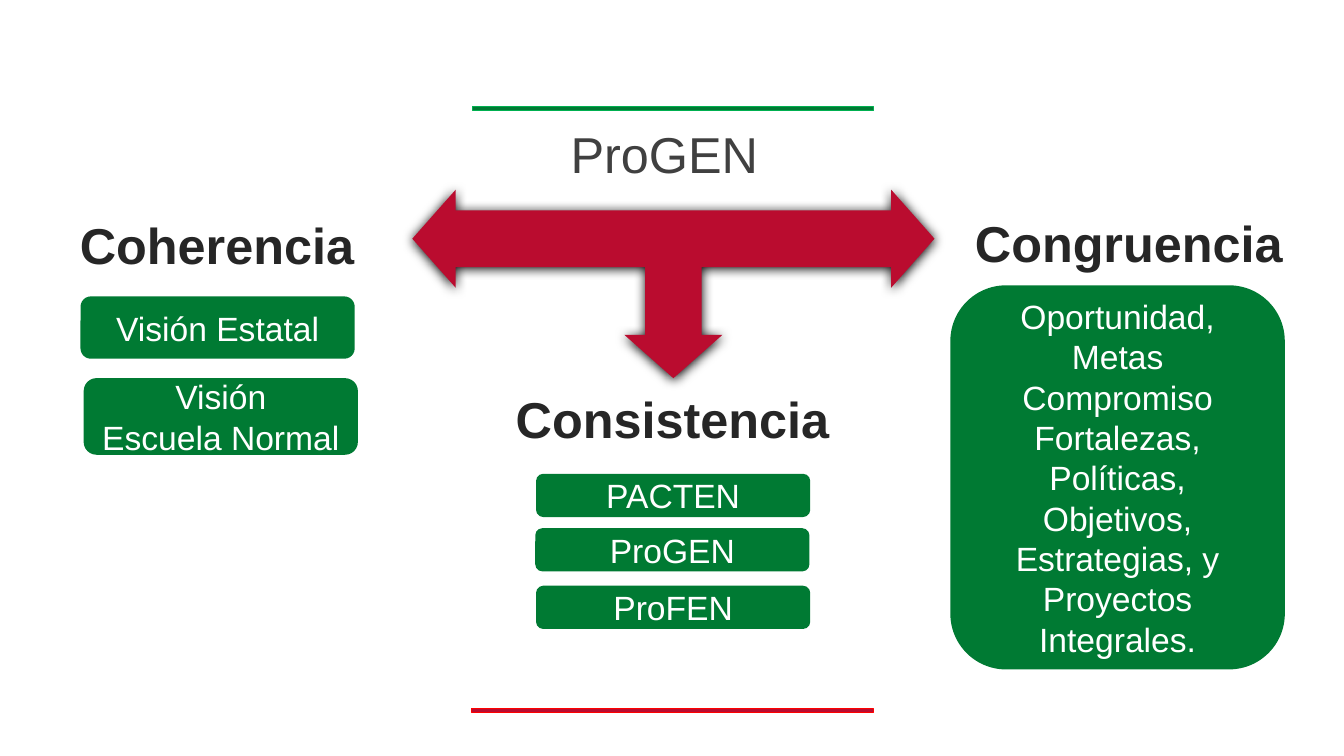
from dataclasses import dataclass

from lxml import etree
from pptx import Presentation
from pptx.dml.color import RGBColor
from pptx.enum.shapes import MSO_SHAPE
from pptx.enum.text import MSO_ANCHOR, PP_ALIGN
from pptx.oxml import parse_xml
from pptx.oxml.ns import nsdecls
from pptx.shapes.autoshape import Shape
from pptx.slide import Slide
from pptx.util import Cm, Pt

RECT = MSO_SHAPE.RECTANGLE
ROUND = MSO_SHAPE.ROUNDED_RECTANGLE
ARROW = MSO_SHAPE.LEFT_RIGHT_UP_ARROW
TOP, MIDDLE, BOTTOM = MSO_ANCHOR.TOP, MSO_ANCHOR.MIDDLE, MSO_ANCHOR.BOTTOM
CENTER = PP_ALIGN.CENTER


@dataclass(frozen=True)
class Theme:
    font: str = "Arial"
    green: str = "007A33"
    lime: str = "00B050"
    wine: str = "BA0C2F"
    red: str = "FF0000"
    white: str = "FFFFFF"
    dark: str = "262626"
    gray: str = "404040"
    head: int = 36
    body: int = 24


@dataclass(frozen=True)
class Area:
    """Place and size in centimetres."""
    left: float
    top: float
    width: float
    height: float

    def emu(self) -> tuple[Cm, Cm, Cm, Cm]:
        return Cm(self.left), Cm(self.top), Cm(self.width), Cm(self.height)


@dataclass(frozen=True)
class Rule:
    area: Area
    fill: str
    line: str


@dataclass(frozen=True)
class Label:
    text: str
    area: Area


THEME = Theme()
HEAD_W, HEAD_H = 9.0, 1.8
CARD_W, PLAN_H = 6.91, 1.09

RULES = [
    Rule(Area(11.91, 2.69, 10.11, 0.1), THEME.green, THEME.lime),
    Rule(Area(11.89, 17.86, 10.11, 0.1), THEME.wine, THEME.red),
]
HEADS = [
    Label("Coherencia", Area(0.97, 5.26, HEAD_W, HEAD_H)),
    Label("Congruencia", Area(23.95, 5.23, HEAD_W, HEAD_H)),
    Label("Consistencia", Area(12.45, 9.65, HEAD_W, HEAD_H)),
]
CARDS = [
    Label("Visión Estatal", Area(2.03, 7.47, CARD_W, 1.57)),
    Label("Visión\nEscuela Normal", Area(2.11, 9.53, CARD_W, 1.93)),
    Label("PACTEN", Area(13.51, 11.94, CARD_W, PLAN_H)),
    Label("ProGEN", Area(13.49, 13.31, CARD_W, PLAN_H)),
    Label("ProFEN", Area(13.51, 14.76, CARD_W, PLAN_H)),
    Label("Oportunidad, Metas Compromiso Fortalezas, Políticas, Objetivos, "
          "Estrategias, y Proyectos Integrales.",
          Area(23.95, 7.19, 8.43, 9.68)),
]
TITLE = Label("ProGEN", Area(13.06, 2.72, 7.37, 2.06))
SPAN = Area(10.39, 4.78, 13.16, 4.75)


def write(shape: Shape, text: str, size: int, color: str, anchor: MSO_ANCHOR,
          bold: bool = False, lead: float = 1.0) -> None:
    frame = shape.text_frame
    frame.word_wrap = True
    frame.vertical_anchor = anchor
    frame.text = text
    for para in frame.paragraphs:
        para.alignment = CENTER
        para.line_spacing = lead
        para.font.name = THEME.font
        para.font.size = Pt(size)
        para.font.bold = bold
        para.font.color.rgb = RGBColor.from_string(color)


def block(slide: Slide, kind: MSO_SHAPE, area: Area, fill: str) -> Shape:
    """Add a filled shape with no outline and no shadow."""
    shape = slide.shapes.add_shape(kind, *area.emu())
    shape.shadow.inherit = False
    shape.fill.solid()
    shape.fill.fore_color.rgb = RGBColor.from_string(fill)
    shape.line.fill.background()
    return shape


def draw_rule(slide: Slide, rule: Rule) -> None:
    bar = block(slide, RECT, rule.area, rule.fill)
    bar.line.color.rgb = RGBColor.from_string(rule.line)
    bar.line.width = Pt(0.5)


def draw_arrow(slide: Slide) -> None:
    arrow = block(slide, ARROW, SPAN, THEME.wine)
    arrow.rotation = 180
    for i, value in enumerate((0.3, 0.26, 0.23)):
        arrow.adjustments[i] = value
    glow = parse_xml(
        f'<a:outerShdw {nsdecls("a")} blurRad="{Pt(8.5)}" dist="{Pt(1)}" '
        'dir="5400000" algn="ctr" rotWithShape="0"/>')
    tint = etree.SubElement(glow, glow.tag.replace("outerShdw", "srgbClr"))
    tint.set("val", "000000")
    arrow.element.spPr.find("{*}effectLst").append(glow)


def draw_text(slide: Slide, label: Label, color: str, anchor: MSO_ANCHOR,
              bold: bool = False, lead: float = 1.0) -> None:
    box = slide.shapes.add_textbox(*label.area.emu())
    write(box, label.text, THEME.head, color, anchor, bold, lead)


def draw_card(slide: Slide, label: Label) -> None:
    card = block(slide, ROUND, label.area, THEME.green)
    write(card, label.text, THEME.body, THEME.white, MIDDLE)


def main() -> None:
    deck = Presentation()
    deck.slide_width, deck.slide_height = Cm(33.87), Cm(19.05)
    slide = deck.slides.add_slide(deck.slide_layouts[6])
    for rule in RULES:
        draw_rule(slide, rule)
    draw_arrow(slide)
    for head in HEADS:
        draw_text(slide, head, THEME.dark, TOP, bold=True)
    for card in CARDS:
        draw_card(slide, card)
    draw_text(slide, TITLE, THEME.gray, BOTTOM, lead=0.9)
    deck.save("out.pptx")


if __name__ == "__main__":
    main()
